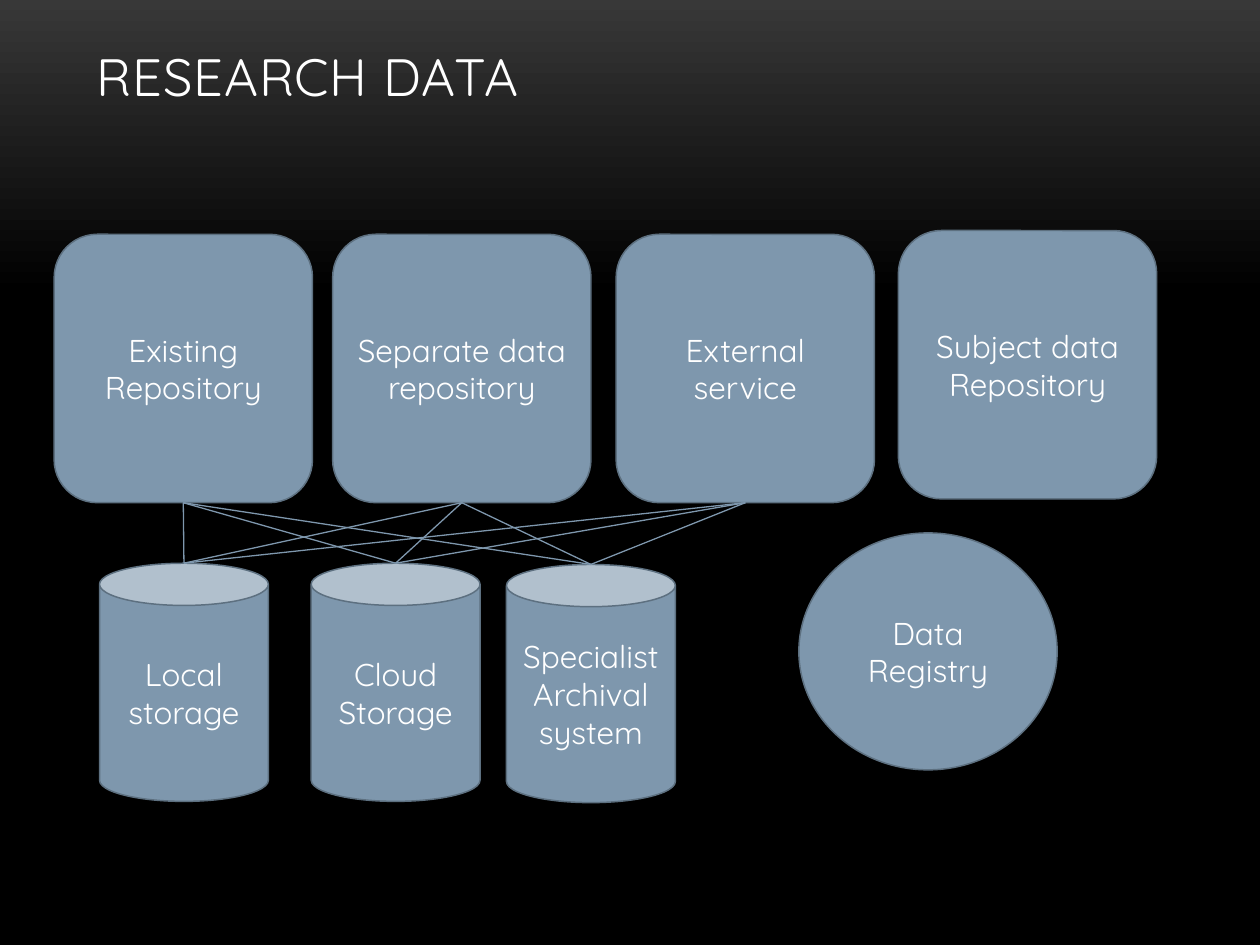
from dataclasses import dataclass
from itertools import product

from lxml import etree
from pptx import Presentation
from pptx.dml.color import RGBColor
from pptx.enum.shapes import MSO_CONNECTOR, MSO_SHAPE
from pptx.enum.text import MSO_ANCHOR, PP_ALIGN
from pptx.oxml.ns import qn
from pptx.util import Inches, Pt

ROUNDED = MSO_SHAPE.ROUNDED_RECTANGLE
CYLINDER = MSO_SHAPE.CAN
ELLIPSE = MSO_SHAPE.OVAL
STRAIGHT = MSO_CONNECTOR.STRAIGHT
MIDDLE, TOP = MSO_ANCHOR.MIDDLE, MSO_ANCHOR.TOP
CENTER, LEFT = PP_ALIGN.CENTER, PP_ALIGN.LEFT

SLIDE_WIDTH, SLIDE_HEIGHT = Inches(10), Inches(7.5)
REPOSITORY_BOTTOM_SITE = 2
STORAGE_TOP_SITE = 1


@dataclass(frozen=True)
class Theme:
    font: str = "Quicksand"
    text: RGBColor = RGBColor(0xFF, 0xFF, 0xFF)
    fill: RGBColor = RGBColor(0x7E, 0x97, 0xAD)
    outline: RGBColor = RGBColor(0x5D, 0x70, 0x80)
    glow: RGBColor = RGBColor(0x38, 0x38, 0x38)
    backdrop: RGBColor = RGBColor(0, 0, 0)
    title_size: int = 30
    label_size: int = 18
    outline_width: float = 0.85
    link_width: float = 0.75


THEME = Theme()

REPOSITORY_SIZE = (20.5, 28.4)
REPOSITORIES = [
    ("Existing Repository", 4.3, 24.8),
    ("Separate data repository", 26.4, 24.8),
    ("External service", 48.9, 24.8),
    ("Subject data Repository", 71.3, 24.4),
]
STORAGE_SIZE = (13.4, 25.2)
STORAGES = [
    ("Local storage", 7.9, 59.6),
    ("Cloud\nStorage", 24.7, 59.6),
    ("Specialist Archival system", 40.2, 59.73),
]


def percent_box(left, top, width, height):
    across, down = SLIDE_WIDTH / 100, SLIDE_HEIGHT / 100
    return [round(n) for n in (left * across, top * down, width * across, height * down)]


def paint_background(slide):
    fill = slide.background.fill
    fill.gradient()
    fill.gradient_angle = 270
    stops = ((0, THEME.glow), (0.31, THEME.backdrop))
    for stop, (position, color) in zip(fill.gradient_stops, stops):
        stop.position = position
        stop.color.rgb = color


def write_text(frame, text, size, align, anchor):
    frame.word_wrap = True
    frame.vertical_anchor = anchor
    for index, line in enumerate(text.split("\n")):
        paragraph = frame.add_paragraph() if index else frame.paragraphs[0]
        paragraph.alignment = align
        run = paragraph.add_run()
        run.text = line
        run.font.name = THEME.font
        run.font.size = Pt(size)
        run.font.color.rgb = THEME.text


def add_title(slide, text):
    title = slide.shapes.add_textbox(*percent_box(6.7, 4, 86.7, 16.67))
    write_text(title.text_frame, text, THEME.title_size, LEFT, TOP)
    for run in title.text_frame.paragraphs[0].runs:
        run.font._element.set("spc", "50")


def add_node(slide, kind, label, left, top, size):
    node = slide.shapes.add_shape(kind, *percent_box(left, top, *size))
    node.shadow.inherit = False
    node.fill.solid()
    node.fill.fore_color.rgb = THEME.fill
    node.line.color.rgb = THEME.outline
    node.line.width = Pt(THEME.outline_width)
    write_text(node.text_frame, label, THEME.label_size, CENTER, MIDDLE)
    return node


def add_link(slide, repository, storage):
    link = slide.shapes.add_connector(STRAIGHT, 0, 0, 0, 0)
    link.begin_connect(repository, REPOSITORY_BOTTOM_SITE)
    link.end_connect(storage, STORAGE_TOP_SITE)
    link.end_x = storage.left + storage.width // 2
    link.end_y = storage.top
    link.line.color.rgb = THEME.fill
    link.line.width = Pt(THEME.link_width)
    etree.SubElement(link._element.spPr, qn("a:effectLst"))


def main():
    presentation = Presentation()
    presentation.slide_width, presentation.slide_height = SLIDE_WIDTH, SLIDE_HEIGHT
    slide = presentation.slides.add_slide(presentation.slide_layouts[6])
    paint_background(slide)
    add_title(slide, "RESEARCH DATA")
    repositories = [add_node(slide, ROUNDED, *entry, REPOSITORY_SIZE) for entry in REPOSITORIES]
    storages = [add_node(slide, CYLINDER, *entry, STORAGE_SIZE) for entry in STORAGES]
    for repository, storage in product(repositories[:3], storages):
        add_link(slide, repository, storage)
    add_node(slide, ELLIPSE, "Data Registry", 63.4, 56.4, (20.5, 25.07))
    presentation.save("out.pptx")


if __name__ == "__main__":
    main()
